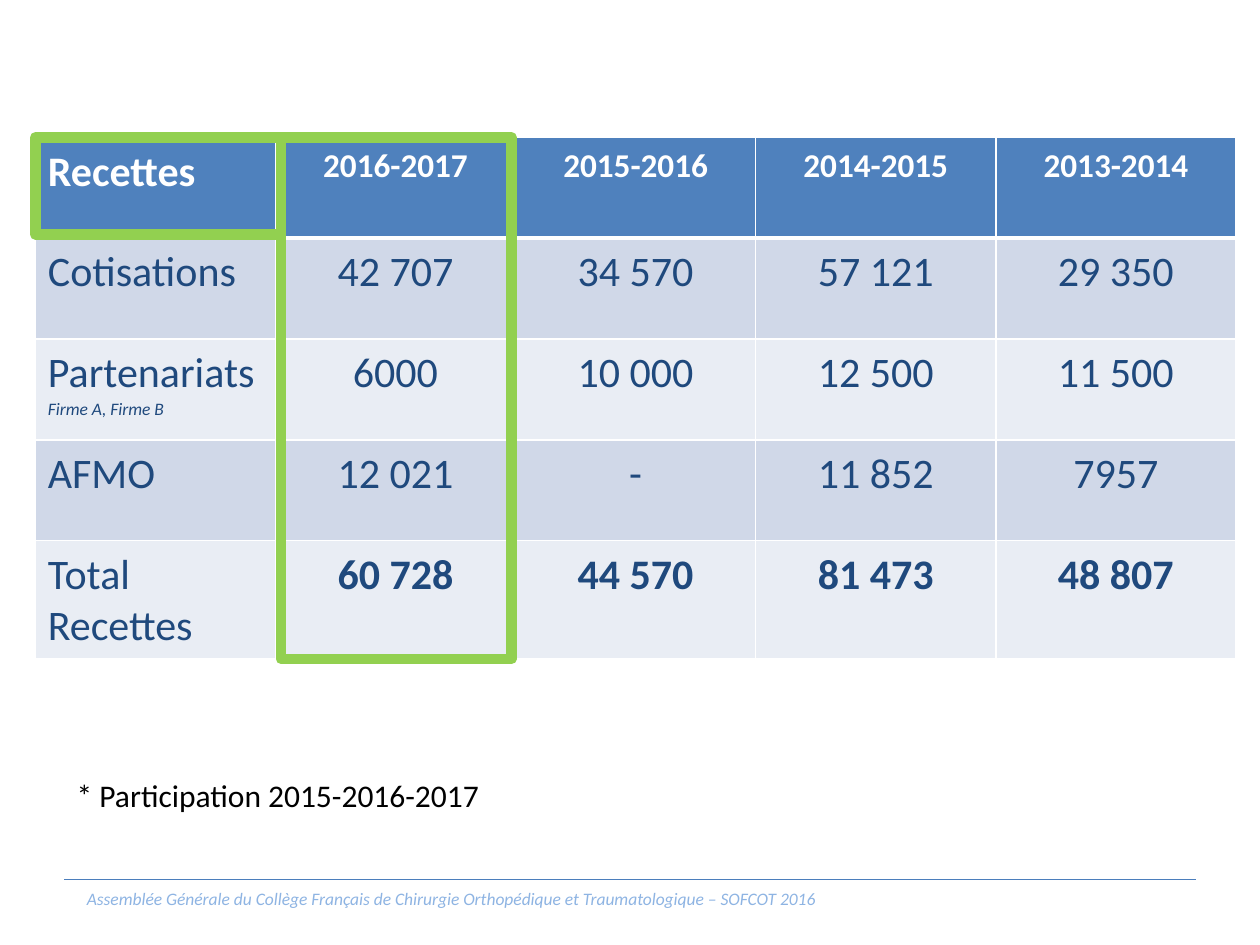
import pptx
import pptx.dml.color
import pptx.enum.shapes
import pptx.enum.text
import pptx.oxml
import pptx.oxml.ns
import pptx.util

ALIGN = pptx.enum.text.PP_ALIGN
NAVY, BLUE, WHITE, GREEN = "1F497D", "4F81BD", "FFFFFF", "92D050"
BANDS = ["D0D8E8", "E9EDF4"]

HEAD = ["Recettes", "2016-2017", "2015-2016", "2014-2015", "2013-2014"]
ROWS = [
    ["Cotisations", "42 707", "34 570", "57 121", "29 350"],
    ["Partenariats", "6000", "10 000", "12 500", "11 500"],
    ["AFMO", "12 021", "-", "11 852", "7957"],
    ["Total Recettes", "60 728", "44 570", "81 473", "48 807"],
]
NOTE = "Firme A, Firme B"


def tint(code):
    return pptx.dml.color.RGBColor.from_string(code)


class Deck:
    """Style and current slide; lengths are units of a 100 by 75 grid."""

    font = "Calibri"
    cols, rows = 100, 75

    def __init__(self):
        self.show = pptx.Presentation()
        self.show.slide_width = pptx.util.Inches(10)
        self.show.slide_height = pptx.util.Inches(7.5)
        self.slide = self.show.slides.add_slide(self.show.slide_layouts[6])
        self.shapes = self.slide.shapes

    def across(self, n):
        return round(self.show.slide_width * n / self.cols)

    def down(self, n):
        return round(self.show.slide_height * n / self.rows)

    def place(self, x, y, w, h):
        return self.across(x), self.down(y), self.across(w), self.down(h)

    def run(self, para, text, size, color, bold=False, italic=False):
        run = para.add_run()
        run.text = text
        font = run.font
        font.name, font.size = self.font, pptx.util.Pt(size)
        font.bold, font.italic = bold, italic
        font.color.rgb = tint(color)

    def text(self, box, text, size, color, align=ALIGN.LEFT, wrap=True, italic=False):
        frame = self.shapes.add_textbox(*self.place(*box)).text_frame
        frame.word_wrap = wrap
        para = frame.paragraphs[0]
        para.alignment = align
        self.run(para, text, size, color, italic=italic)

    def rule(self, x, y, end, color, width):
        kind = pptx.enum.shapes.MSO_CONNECTOR.STRAIGHT
        line = self.shapes.add_connector(
            kind, self.across(x), self.down(y), self.across(end), self.down(y))
        line.line.color.rgb = tint(color)
        line.line.width = pptx.util.Pt(width)
        line._element.spPr.append(pptx.oxml.parse_xml(
            f"<a:effectLst {pptx.oxml.ns.nsdecls('a')}/>"))

    def frame(self, box, color, width):
        kind = pptx.enum.shapes.MSO_SHAPE.RECTANGLE
        rect = self.shapes.add_shape(kind, *self.place(*box))
        rect.shadow.inherit = False
        rect.fill.background()
        rect.line.color.rgb = tint(color)
        rect.line.width = pptx.util.Pt(width)

    def edge(self, cell, base):
        """White borders, with the bottom one of the given width."""
        props = cell._tc.get_or_add_tcPr()
        for spot, side in enumerate("LRTB"):
            width = pptx.util.Pt(base if side == "B" else 1)
            props.insert(spot, pptx.oxml.parse_xml(
                f"<a:ln{side} {pptx.oxml.ns.nsdecls('a')} w='{width}'><a:solidFill>"
                f"<a:srgbClr val='{WHITE}'/></a:solidFill></a:ln{side}>"))

    def cell(self, cell, text, fill, size, color, bold, align, base):
        cell.fill.solid()
        cell.fill.fore_color.rgb = tint(fill)
        cell.margin_left = cell.margin_right = pptx.util.Inches(0.1)
        cell.margin_top = cell.margin_bottom = pptx.util.Inches(0.07)
        self.edge(cell, base)
        para = cell.text_frame.paragraphs[0]
        para.alignment = align
        self.run(para, text, size, color, bold)

    def table(self, box, head, body, high):
        grid = self.shapes.add_table(
            len(body) + 1, len(head), *self.place(*box)).table
        for row in grid.rows:
            row.height = self.down(high)
        for r, line in enumerate([head] + body):
            top, last = r == 0, r == len(body)
            for c, text in enumerate(line):
                self.cell(
                    grid.cell(r, c), text,
                    fill=BLUE if top else BANDS[(r - 1) % 2],
                    size=19 if top and c else 24,
                    color=WHITE if top else NAVY,
                    bold=top or (last and c > 0),
                    align=ALIGN.CENTER if c else ALIGN.LEFT,
                    base=3 if top else 1)
        return grid


def main():
    deck = Deck()
    left, top, high = 2.8, 10.9, 41.4
    deck.rule(5.1, 69.8, 94.9, "4B7EBC", 0.75)
    deck.text((5.1, 70, 61.4, 2.7),
              "Assemblée Générale du Collège Français de Chirurgie "
              "Orthopédique et Traumatologique – SOFCOT 2016",
              10, "8EB4E3", ALIGN.CENTER, italic=True)

    grid = deck.table((left, top, 95.3, 40), HEAD, ROWS, 8)
    para = grid.cell(2, 0).text_frame.add_paragraph()
    deck.run(para, NOTE, 10, NAVY, italic=True)

    deck.text((5.1, 61.1, 34.3, 4), "* Participation 2015-2016-2017",
              18, "000000", wrap=False)
    label = 19.5
    deck.frame((left, top, label, 7.7), GREEN, 6)
    deck.frame((left + label, top, 18.3, high), GREEN, 6)
    deck.show.save("out.pptx")


if __name__ == "__main__":
    main()
